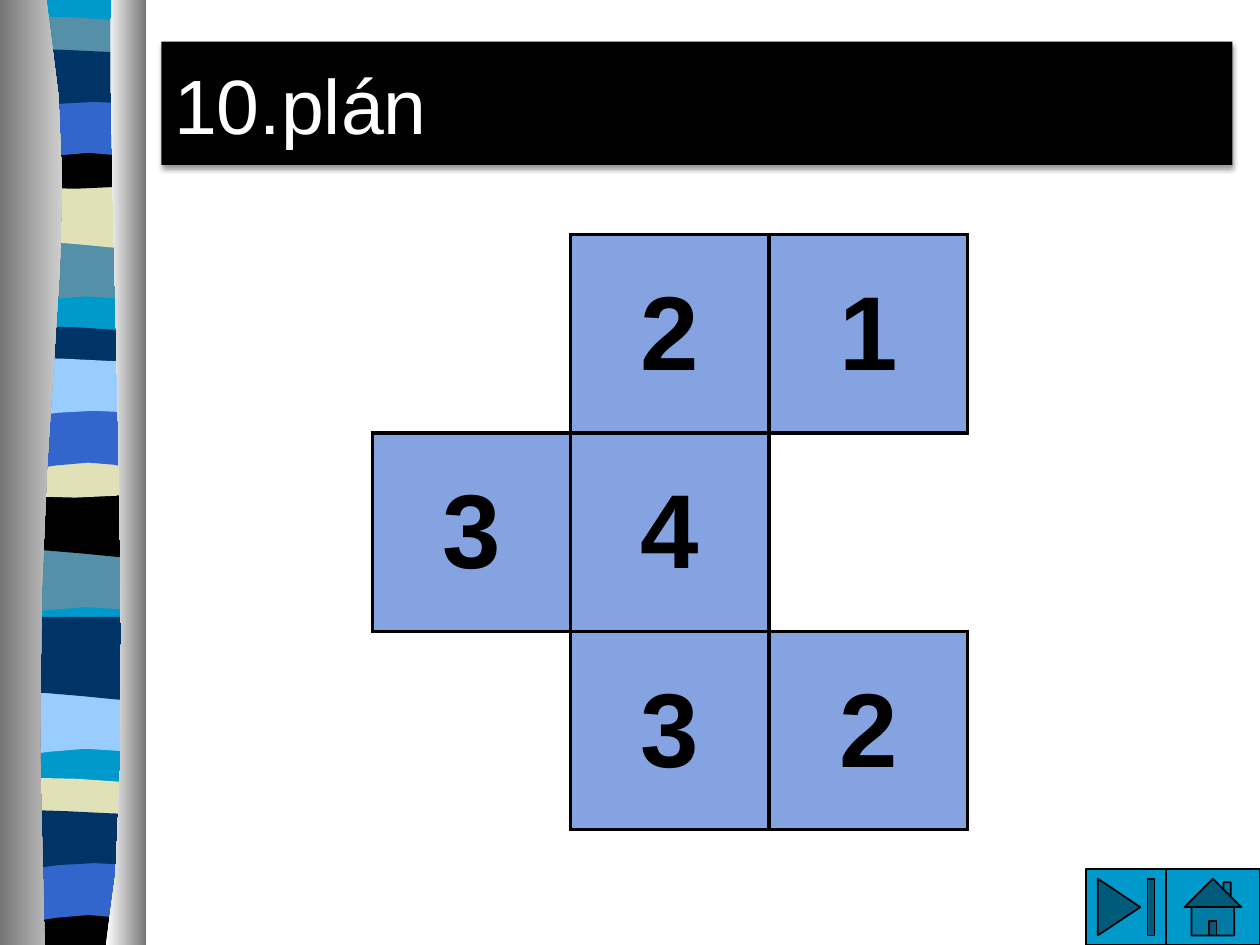
from dataclasses import dataclass

from lxml import etree
from pptx import Presentation
from pptx.dml.color import RGBColor
from pptx.enum.shapes import MSO_SHAPE
from pptx.enum.text import MSO_ANCHOR, PP_ALIGN
from pptx.oxml.ns import qn
from pptx.util import Pt

END, HOME = MSO_SHAPE.ACTION_BUTTON_END, MSO_SHAPE.ACTION_BUTTON_HOME
LEFT, CENTER = PP_ALIGN.LEFT, PP_ALIGN.CENTER
MIDDLE = MSO_ANCHOR.MIDDLE


@dataclass(frozen=True)
class Theme:
    """Colours, font and type sizes of the slide."""
    font: str = "Arial"
    title: int = 44
    digit: int = 60
    white: str = "FFFFFF"
    black: str = "000000"
    cell: str = "85A3E0"
    aqua: str = "0099CC"
    teal: str = "5490A8"
    sand: str = "E1E1B7"
    blue: str = "3366CC"
    navy: str = "003366"
    sky: str = "99CCFF"
    gray: str = "767676"
    pale: str = "CFCFCF"


T = Theme()
SIDE = 113.4
GRID = [["", "2", "1"], ["3", "4", ""], ["", "3", "2"]]

FORMS = [
    [(82, 0), (82, 38.5), (28, 31.5, 17, 44.5, 4, 38.5), (4, 0)],
    [(82, -7), (82, 39), (69, 44.5, 28, 32, 4, 38), (4, -7)],
    [(82, 1), (82, 21), (4, 21), (4, -0.5), (34, -4, 56, 0, 82, 1)],
    [(82, 0), (82, 26), (69, 31, 17, 31, 4, 27), (4, 0)],
    [(82, 0), (82, 39), (56, 32, 50, 32, 4, 40), (4, 0)],
    [(82, 1), (82, 31), (65, 29, 50, 26, 4, 34), (4, -1),
     (15, -3, 57, 0.5, 82, 1)],
]
BANDS = [
    [(133, T.teal), (101.5, T.sand), (11.5, T.teal),
     (78, T.black), (53.5, T.blue), (29.5, T.navy)],
    [(310.5, T.teal), (278, T.black), (188.5, T.navy),
     (254.5, T.sand), (230.5, T.blue), (206, T.sky)],
    [(391.5, T.sky), (359.5, T.navy), (446.5, T.sand),
     (512.5, T.black), (489, T.blue), (464.5, T.navy)],
]
BASE = [(82, 0), (82, 538), (4, 538), (4, 0)]
DRAPES = [
    ([(26.5, 0), (52.5, 155.5, 12.5, 213, 25.5, 540), (0, 540), (0, 0)],
     T.gray, T.pale),
    ([(63.5, 0), (60.5, 90, 80, 465, 60.5, 540), (83.5, 540), (83.5, 0)],
     T.white, T.gray),
]


def rgb(code):
    """Turn a hex code into a colour."""
    return RGBColor.from_string(code)


def paint(fill, code):
    """Give a fill one solid colour."""
    fill.solid()
    fill.fore_color.rgb = rgb(code)


def write(frame, text, size, color, bold=False, align=LEFT):
    """Write one formatted paragraph and return it."""
    para = frame.paragraphs[0]
    para.alignment = align
    run = para.add_run()
    run.text = text
    font = run.font
    font.name, font.size, font.bold = T.font, Pt(size), bold
    font.color.rgb = rgb(color)
    return para


def trace(path, steps):
    """Turn corners and cubic curves into plain points."""
    dots = []
    for part in path:
        if len(part) == 2:
            dots.append(part)
            continue
        ends = [dots[-1], part[:2], part[2:4], part[4:]]
        for step in range(1, steps + 1):
            t = step / steps
            u = 1 - t
            mix = (u ** 3, 3 * u * u * t, 3 * u * t * t, t ** 3)
            dots.append(tuple(sum(m * e[i] for m, e in zip(mix, ends))
                              for i in (0, 1)))
    return dots


def add_form(slide, path, top=0, steps=4):
    """Add a closed outline without line or shadow."""
    dots = [(Pt(x), Pt(y + top)) for x, y in trace(path, steps)]
    if dots[-1] == dots[0]:
        dots.pop()
    pen = slide.shapes.build_freeform(*dots[0], scale=1.0)
    pen.add_line_segments(dots[1:], close=True)
    form = pen.convert_to_shape()
    form.shadow.inherit = False
    form.line.fill.background()
    return form


def add_strip(slide):
    """Add the wavy ribbon between two silver drapes."""
    paint(add_form(slide, BASE).fill, T.aqua)
    for group in BANDS:
        for path, (top, color) in zip(FORMS, group):
            paint(add_form(slide, path, top).fill, color)
    for path, *ends in DRAPES:
        fill = add_form(slide, path, steps=8).fill
        fill.gradient()
        fill.gradient_angle = 0
        for stop, color in zip(fill.gradient_stops, ends):
            stop.color.rgb = rgb(color)


def add_title(slide, text, start):
    """Fill the title bar with a numbered heading."""
    title = slide.shapes.title
    title.left, title.top = Pt(92.25), Pt(23.75)
    title.width, title.height = Pt(612), Pt(70.5)
    paint(title.fill, T.black)
    cast = etree.SubElement(title._element.spPr, qn("a:effectLst"))
    shade = etree.SubElement(cast, qn("a:outerShdw"), blurRad=str(Pt(3)),
                             dist=str(Pt(2)), dir="5400000")
    tint = etree.SubElement(shade, qn("a:srgbClr"), val=T.black)
    etree.SubElement(tint, qn("a:alpha"), val="40000")
    title.text_frame.vertical_anchor = MIDDLE
    para = write(title.text_frame, text, T.title, T.white)
    props = para._p.get_or_add_pPr()
    props.set("marL", str(Pt(58.5)))
    props.set("indent", str(Pt(-58.5)))
    etree.SubElement(props, qn("a:buFont"), typeface=T.font)
    etree.SubElement(props, qn("a:buAutoNum"), type="arabicPeriod",
                     startAt=str(start))


def is_full(row, col):
    """Tell whether a grid place holds a digit."""
    return 0 <= row < 3 and 0 <= col < 3 and GRID[row][col] != ""


def add_edge(cell, side, drawn):
    """Draw or clear one border of a table cell."""
    line = etree.SubElement(cell._tc.get_or_add_tcPr(), qn("a:ln" + side),
                            w=str(Pt(2.25)))
    if drawn:
        fill = etree.SubElement(line, qn("a:solidFill"))
        etree.SubElement(fill, qn("a:srgbClr"), val=T.black)
    else:
        etree.SubElement(line, qn("a:noFill"))


def add_grid(slide):
    """Add the plan of numbered squares."""
    table = slide.shapes.add_table(3, 3, Pt(212.75), Pt(134), Pt(3 * SIDE),
                                   Pt(3 * SIDE)).table
    table.first_row = table.horz_banding = False
    for i in range(3):
        table.columns[i].width = table.rows[i].height = Pt(SIDE)
    near = {"L": (0, -1), "R": (0, 1), "T": (-1, 0), "B": (1, 0)}
    for row, line in enumerate(GRID):
        for col, text in enumerate(line):
            cell = table.cell(row, col)
            for side, (down, over) in near.items():
                add_edge(cell, side, is_full(row, col)
                         or is_full(row + down, col + over))
            if text:
                paint(cell.fill, T.cell)
                cell.vertical_anchor = MIDDLE
                write(cell.text_frame, text, T.digit, T.black, bold=True,
                      align=CENTER)
            else:
                cell.fill.background()


def add_button(slide, kind, left, width):
    """Add an action button on the bottom edge."""
    shape = slide.shapes.add_shape(kind, Pt(left), Pt(496.75), Pt(width),
                                   Pt(43.25))
    shape.shadow.inherit = False
    paint(shape.fill, T.aqua)
    shape.line.color.rgb = rgb(T.black)
    shape.line.width = Pt(1)


def main():
    """Build and save the slide."""
    deck = Presentation()
    deck.slide_width, deck.slide_height = Pt(720), Pt(540)
    slide = deck.slides.add_slide(deck.slide_layouts[5])
    add_strip(slide)
    add_title(slide, "plán", 10)
    add_grid(slide)
    add_button(slide, END, 620.75, 45.5)
    add_button(slide, HOME, 666.25, 53.75)
    deck.save("out.pptx")


if __name__ == "__main__":
    main()
